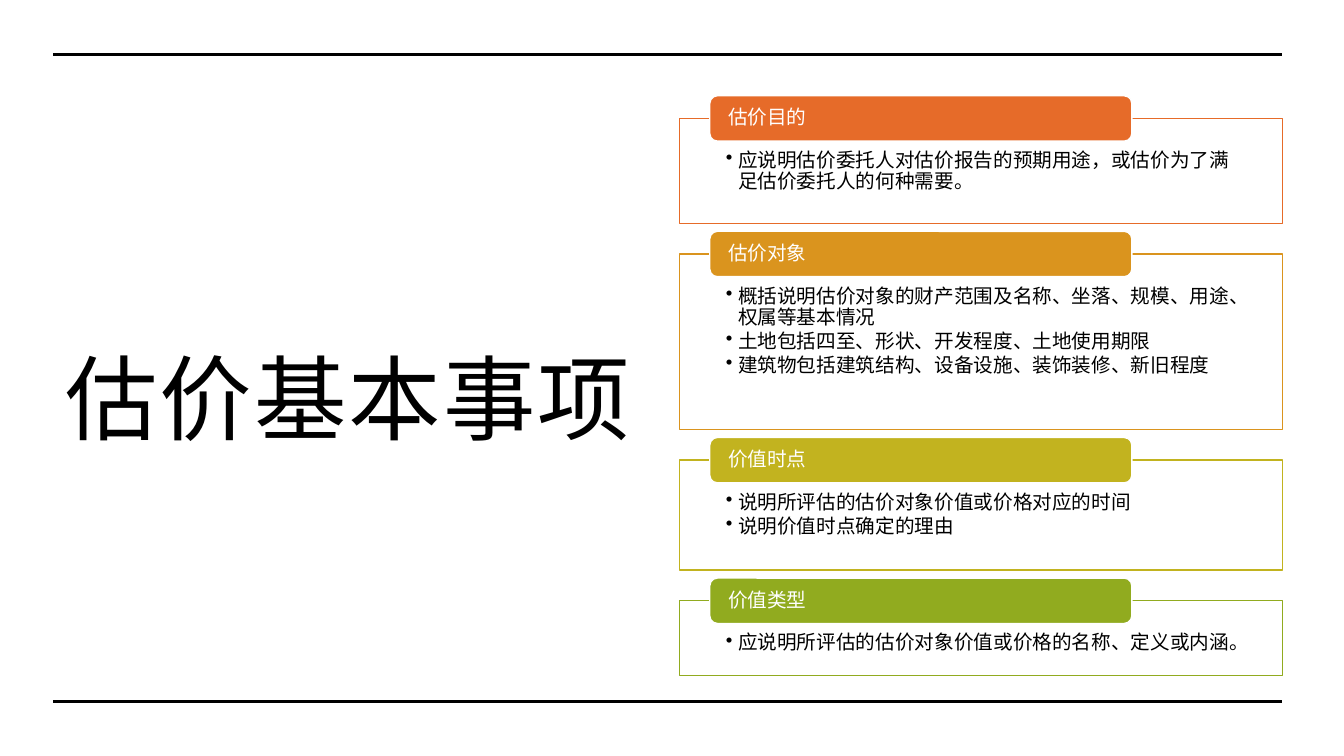
from pptx import Presentation
from pptx.dml.color import RGBColor
from pptx.enum.shapes import MSO_CONNECTOR, MSO_SHAPE
from pptx.enum.text import MSO_ANCHOR, MSO_AUTO_SIZE, PP_ALIGN
from pptx.oxml.ns import qn
from pptx.util import Inches, Pt
from lxml.etree import SubElement

TITLE = "估价基本事项"
SECTIONS = [
    ("估价目的", "orange", 1.04,
     ["应说明估价委托人对估价报告的预期用途，或估价为了满足估价委托人的何种需要。"]),
    ("估价对象", "amber", 1.74,
     ["概括说明估价对象的财产范围及名称、坐落、规模、用途、权属等基本情况",
      "土地包括四至、形状、开发程度、土地使用期限",
      "建筑物包括建筑结构、设备设施、装饰装修、新旧程度"]),
    ("价值时点", "olive", 1.09,
     ["说明所评估的估价对象价值或价格对应的时间", "说明价值时点确定的理由"]),
    ("价值类型", "green", 0.74,
     ["应说明所评估的估价对象价值或价格的名称、定义或内涵。"]),
]
COLORS = {"orange": "E66B29", "amber": "DA941E", "olive": "C2B31F",
          "green": "91AB1F", "black": "000000", "white": "FFFFFF"}
FONT = "Noto Sans CJK SC"
WIDTH, HEIGHT = 13.33, 7.5
LEFT, RIGHT = 0.53, 12.72
RULES = (0.54, 6.96)
TOP, BOTTOM = 0.95, 6.7
BOX_LEFT, BOX_WIDTH = 6.74, 5.98
TAB_INDENT, TAB_WIDTH, TAB_HEIGHT = 0.3, 0.7 * BOX_WIDTH, 0.45
TAB_RISE = TAB_HEIGHT / 2
GAP = (BOTTOM - TOP - TAB_RISE - sum(row[2] for row in SECTIONS)) / (len(SECTIONS) - 1)


def rgb(name):
    return RGBColor.from_string(COLORS[name])


def write(shape, lines, size=14, color="black", insets=(0, 0, 0, 0),
          anchor=MSO_ANCHOR.TOP, spacing=0.9, after=0, bullet=False, tracking=0):
    tf = shape.text_frame
    tf.word_wrap = True
    tf.auto_size = MSO_AUTO_SIZE.NONE
    tf.vertical_anchor = anchor
    tf.margin_left, tf.margin_top, tf.margin_right, tf.margin_bottom = map(Inches, insets)
    for i, line in enumerate(lines):
        p = tf.add_paragraph() if i else tf.paragraphs[0]
        p.alignment = PP_ALIGN.LEFT
        p.line_spacing = spacing
        p.space_after = Pt(after)
        if bullet:
            pPr = p._p.get_or_add_pPr()
            pPr.set("marL", str(Inches(0.12)))
            pPr.set("indent", str(-Inches(0.12)))
            SubElement(pPr, qn("a:buChar"), char="•")
        r = p.add_run()
        r.text = line
        r.font.size = Pt(size)
        r.font.name = FONT
        r.font.color.rgb = rgb(color)
        rPr = r._r.get_or_add_rPr()
        rPr.find(qn("a:latin")).addnext(rPr.makeelement(qn("a:ea"), {"typeface": FONT}))
        if tracking:
            rPr.set("spc", str(int(tracking * 100)))


def add_block(s, kind, x, y, w, h, fill, line):
    sp = s.shapes.add_shape(kind, Inches(x), Inches(y), Inches(w), Inches(h))
    sp.shadow.inherit = False
    sp.fill.solid()
    sp.fill.fore_color.rgb = rgb(fill)
    sp.line.color.rgb = rgb(line)
    sp.line.width = Pt(1)
    return sp


def add_rule(s, y):
    rule = s.shapes.add_connector(MSO_CONNECTOR.STRAIGHT, Inches(LEFT), Inches(y),
                                  Inches(RIGHT), Inches(y))
    rule.line.color.rgb = rgb("black")
    rule.line.width = Pt(2.25)
    SubElement(rule._element.spPr, qn("a:effectLst"))


def main():
    prs = Presentation()
    prs.slide_width, prs.slide_height = Inches(WIDTH), Inches(HEIGHT)
    s = prs.slides.add_slide(prs.slide_layouts[5])

    title = s.shapes.title
    title.left, title.top = Inches(LEFT), Inches(TOP)
    title.width, title.height = Inches(6.14), Inches(BOTTOM - TOP)
    write(title, [TITLE], size=66, insets=(0.12, 0.12, 0.12, 0.1),
          anchor=MSO_ANCHOR.MIDDLE, spacing=1.18, tracking=1.5)

    for y in RULES:
        add_rule(s, y)

    y = TOP + TAB_RISE
    for heading, color, height, points in SECTIONS:
        box = add_block(s, MSO_SHAPE.RECTANGLE, BOX_LEFT, y, BOX_WIDTH, height,
                        "white", color)
        write(box, points, insets=(0.46, 0.32, 0.46, 0.11), after=2.1, bullet=True)
        tab = add_block(s, MSO_SHAPE.ROUNDED_RECTANGLE, BOX_LEFT + TAB_INDENT,
                        y - TAB_RISE, TAB_WIDTH, TAB_HEIGHT, color, "white")
        write(tab, [heading], color="white", insets=(0.16, 0, 0.16, 0),
              anchor=MSO_ANCHOR.MIDDLE)
        y += height + GAP

    prs.save("out.pptx")


if __name__ == "__main__":
    main()
